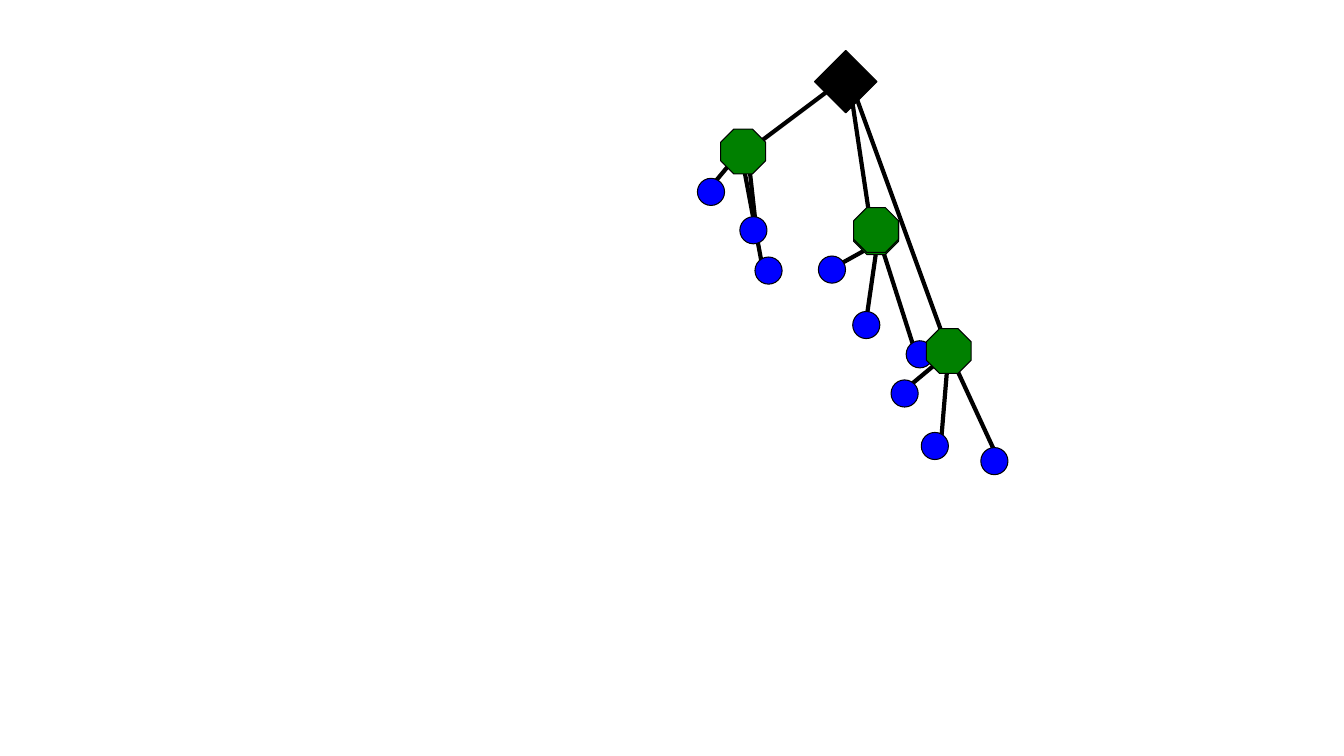
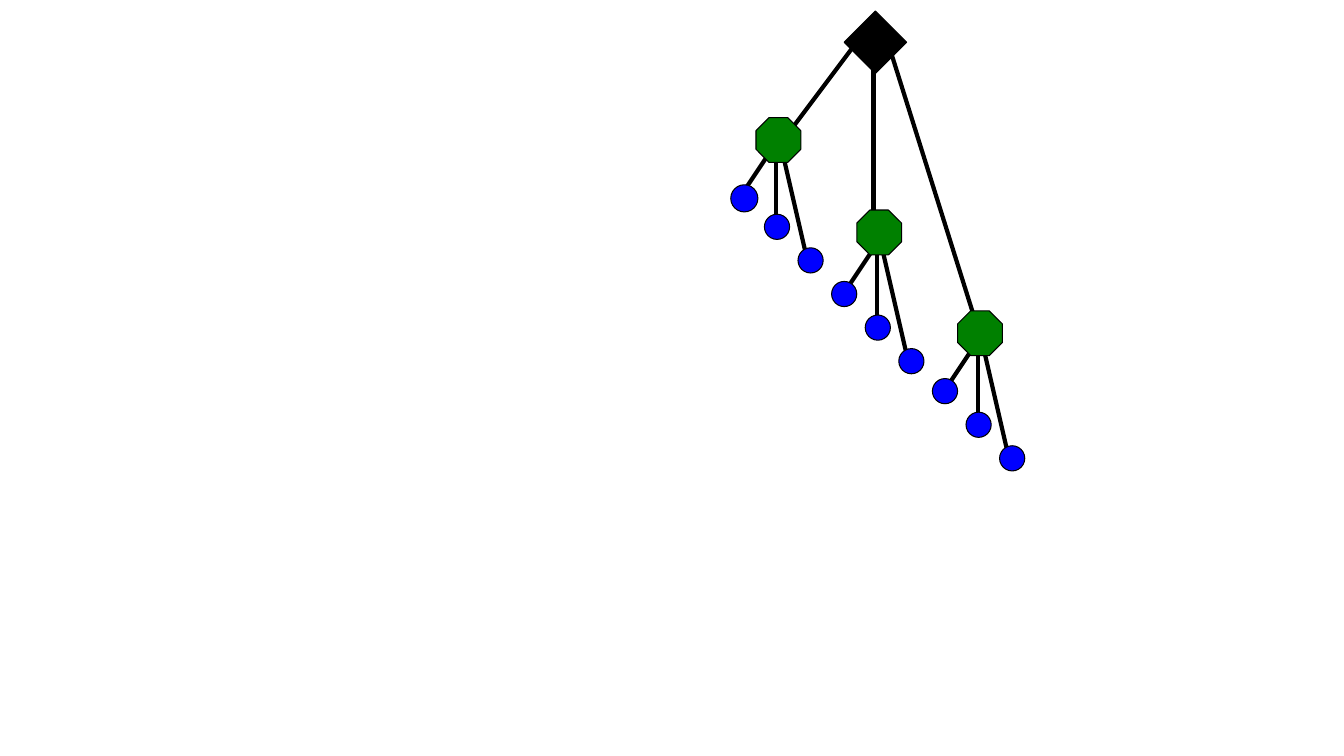
"""Build two slides with tree diagrams: a root, three hubs and nine leaves."""
import pptx
import pptx.dml.color
import pptx.enum.shapes
import pptx.oxml
import pptx.util

Pt = pptx.util.Pt
SHAPES = pptx.enum.shapes.MSO_SHAPE
BLACK, GREEN, BLUE = "000000", "008000", "0000FF"
ROOT_SIZE, HUB_SIZE, LEAF_SIZE, SMALL_LEAF_SIZE = 44.6, 32, 19.4, 18


def paint(fill, color):
    fill.solid()
    fill.fore_color.rgb = pptx.dml.color.RGBColor.from_string(color)


def add_node(page, kind, left, top, size, color):
    node = page.shapes.add_shape(kind, Pt(left), Pt(top), Pt(size), Pt(size))
    node.shadow.inherit = False
    paint(node.fill, color)
    paint(node.line.fill, BLACK)
    node.line.width = Pt(0.75)


loose_edges = [
    (594, 192, 626.4, 174), (626.4, 175.7, 618, 234), (630, 177, 654, 252),
    (642, 282, 678, 252), (678, 246, 672, 318), (678, 252, 714, 330),
    (504, 138, 534, 102), (534, 108, 540, 162), (528, 102, 546, 198),
    (534, 108, 606, 54), (624, 174, 606, 54), (678, 252, 606, 54),
]
loose_leaves = [
    (SHAPES.FLOWCHART_CONNECTOR, left, top, LEAF_SIZE)
    for left, top in [
        (539.3, 183.6), (636.5, 271.4), (658.1, 308.9), (700.6, 319.7), (647.3, 243.4),
        (528.5, 154.8), (498.2, 127.4), (584.6, 182.9), (609.1, 222.5),
    ]
]
loose_hubs = [(661.7, 234.7), (609.8, 149.8), (609.8, 148.3), (514.8, 92.2)]

branch_edges = [(-24, 36, 0, 0), (0, 1.8, 0, 62), (3.6, 3, 21.6, 81)]
branch_leaves = [(-8.4, 51), (15.6, 75), (-32.4, 27)]
tidy_edges, tidy_leaves = [], []
for x, y in [(554.4, 102), (626.4, 174), (698.4, 243.4)]:
    tidy_edges += [(x + x1, y + y1, x + x2, y + y2) for x1, y1, x2, y2 in branch_edges]
    tidy_leaves += [(SHAPES.OVAL, x + dx, y + dy, SMALL_LEAF_SIZE) for dx, dy in branch_leaves]
tidy_leaves[2] = (SHAPES.FLOWCHART_CONNECTOR, 522, 132, LEAF_SIZE)
tidy_edges += [(558, 102, 612, 30), (624, 174, 624, 36), (702, 246, 636, 36)]
tidy_hubs = [(540, 84), (612, 150), (684, 222)]

trees = [
    (loose_edges, loose_leaves, loose_hubs, (581.8, 36)),
    (tidy_edges, tidy_leaves, tidy_hubs, (603, 7.9)),
]

deck = pptx.Presentation()
deck.slide_width, deck.slide_height = Pt(960), Pt(540)

for edges, leaves, hubs, root in trees:
    page = deck.slides.add_slide(deck.slide_layouts[6])
    for ends in edges:
        edge = page.shapes.add_connector(
            pptx.enum.shapes.MSO_CONNECTOR.STRAIGHT, *(Pt(value) for value in ends))
        paint(edge.line.fill, BLACK)
        edge.line.width = Pt(3)
        edge._element.spPr.append(pptx.oxml.parse_xml(
            '<a:effectLst xmlns:a="http://schemas.openxmlformats.org/drawingml/2006/main"/>'))
    add_node(page, SHAPES.DIAMOND, *root, ROOT_SIZE, BLACK)
    for leaf in leaves:
        add_node(page, *leaf, BLUE)
    for hub in hubs:
        add_node(page, SHAPES.OCTAGON, *hub, HUB_SIZE, GREEN)

deck.save("out.pptx")
